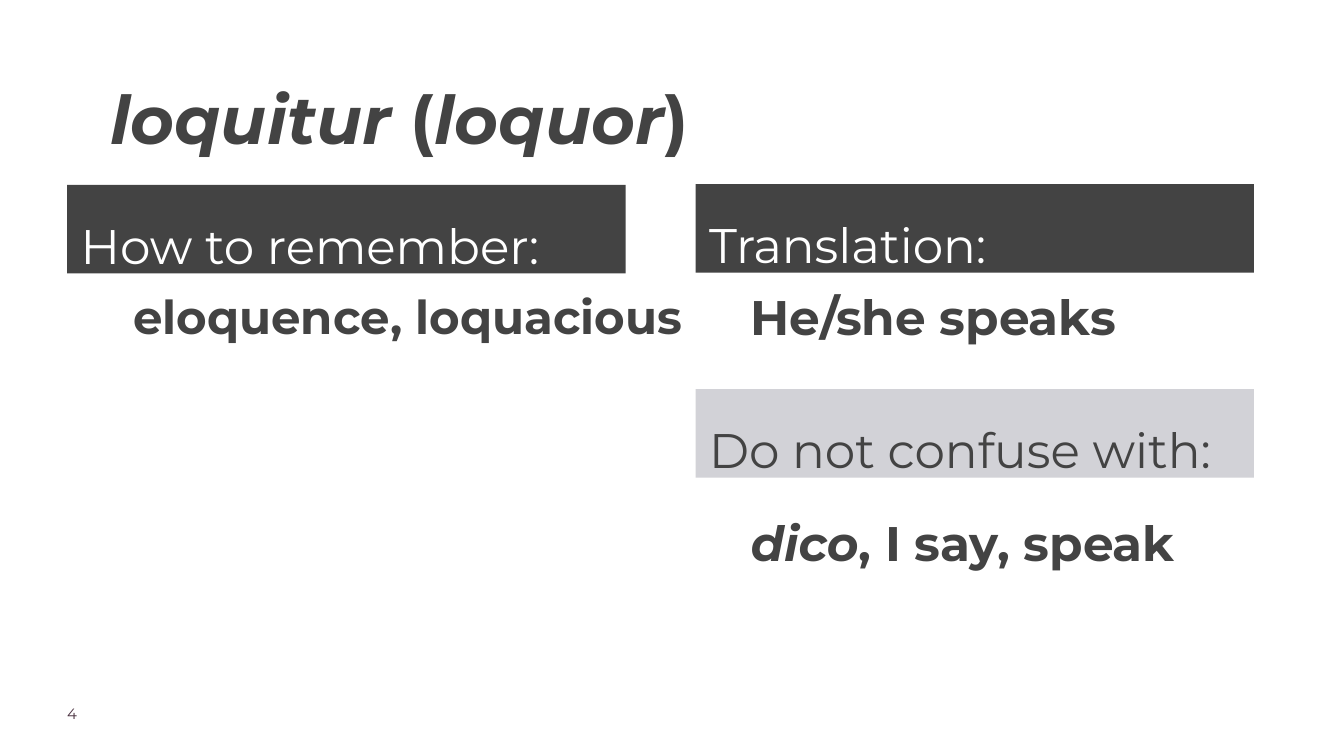
from pptx import Presentation
from pptx import util as u
from pptx.dml.color import RGBColor
from pptx.enum import shapes, text

COLORS = {"dark": "434343", "light": "D2D2D7", "white": "FFFFFF", "number": "4B3241"}
FONT = "Montserrat"
INSET = 0.51
BAR_W, BAR_H = 21.11, 3.35


def rgb(name):
    return RGBColor.from_string(COLORS[name])


def write(sp, runs, size, color, bold=False, inset=0, spacing=None):
    """Fill a shape with one paragraph; runs are (text, italic) pairs."""
    tf = sp.text_frame
    frame = {"word_wrap": True, "vertical_anchor": text.MSO_ANCHOR.TOP}
    for side in ("left", "top", "right", "bottom"):
        frame[f"margin_{side}"] = u.Cm(inset)
    for name, value in frame.items():
        setattr(tf, name, value)
    p = tf.paragraphs[0]
    p.alignment = text.PP_ALIGN.LEFT
    p.line_spacing = spacing
    for words, italic in runs:
        r = p.add_run()
        r.text = words
        style = {"name": FONT, "size": u.Pt(size), "bold": bold, "italic": italic}
        for name, value in style.items():
            setattr(r.font, name, value)
        r.font.color.rgb = rgb(color)


def add_text(s, box, runs, size, color, **style):
    sp = s.shapes.add_textbox(*map(u.Cm, box))
    write(sp, runs, size, color, **style)


def add_bar(s, box, label, fill, color):
    sp = s.shapes.add_shape(shapes.MSO_SHAPE.RECTANGLE, *map(u.Cm, box))
    sp.shadow.inherit = False
    sp.fill.solid()
    sp.fill.fore_color.rgb = rgb(fill)
    sp.line.fill.background()
    write(sp, [(label, False)], 52, color, inset=INSET, spacing=1.3)


def add_section(s, left, top, label, answer, fill="dark", color="white",
                indent=1.57, drop=3.38, width=19.48, size=52, spacing=None):
    """Place a labelled bar with its bold answer indented below it."""
    add_bar(s, (left, top, BAR_W, BAR_H), label, fill, color)
    add_text(s, (left + indent, top + drop, width, BAR_H), answer, size, "dark",
             bold=True, inset=INSET, spacing=spacing)


def main():
    prs = Presentation()
    prs.slide_width, prs.slide_height = u.Cm(50.8), u.Cm(28.58)
    s = prs.slides.add_slide(prs.slide_layouts[6])

    title = [("loquitur ", True), ("(", False), ("loquor", True), (")", False)]
    add_text(s, (4.17, 2.46, 44.09, 4.52), title, 72, "dark", bold=True, spacing=1.15)

    add_section(s, 2.54, 6.99, "How to remember:", [("eloquence, loquacious", False)],
                indent=1.98, width=22.07, size=50)
    add_section(s, 26.29, 6.96, "Translation:", [("He/she speaks", False)])
    add_section(s, 26.29, 14.71, "Do not confuse with:",
                [("dico", True), (", I say, speak", False)],
                fill="light", color="dark", drop=3.53, spacing=1.3)

    add_text(s, (2.54, 26.62, 3.99, 0.99), [("4", False)], 16, "number")
    prs.save("out.pptx")


if __name__ == "__main__":
    main()
